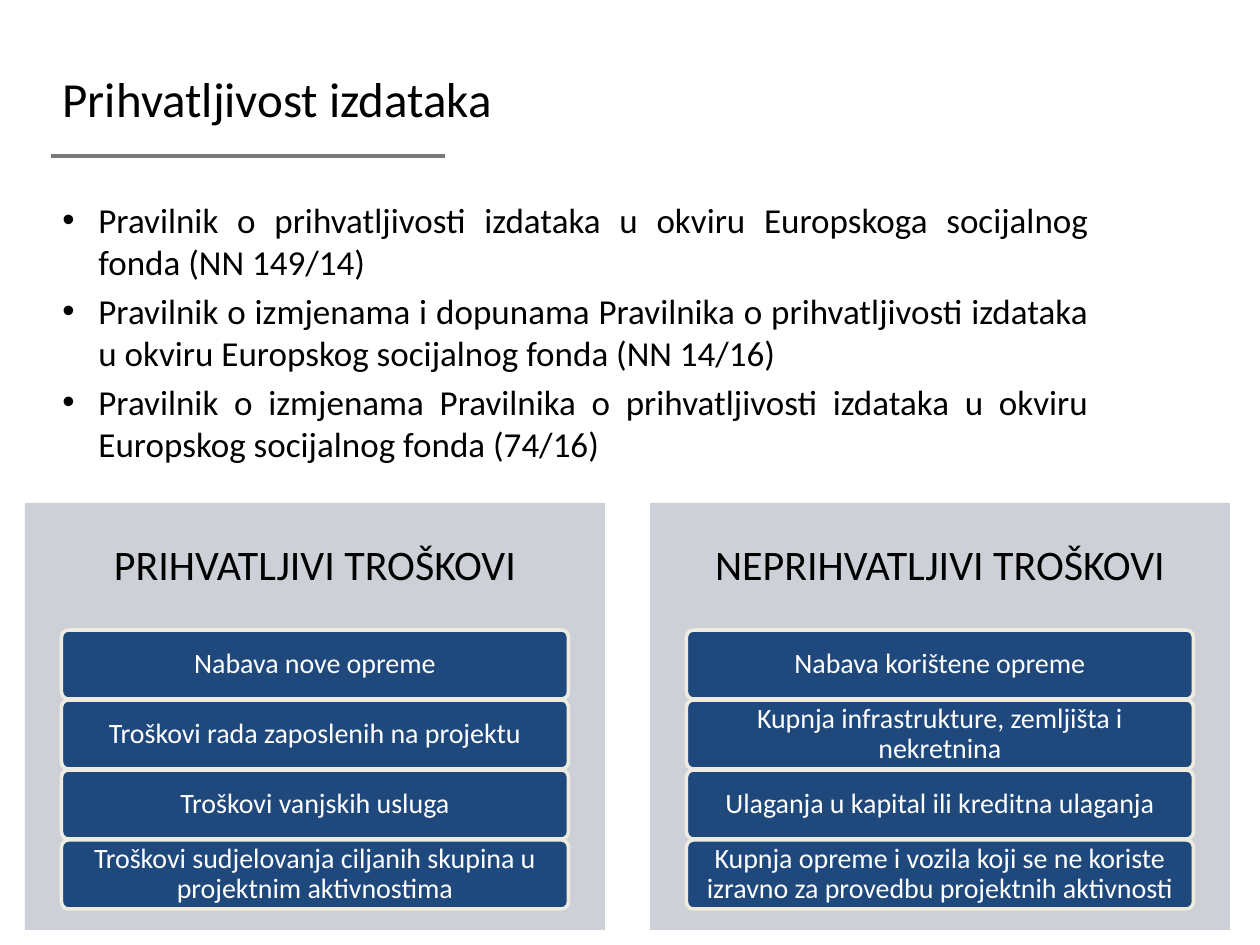
import pptx
import pptx.util
import pptx.oxml
from lxml import etree
from pptx.dml.color import RGBColor
from pptx.enum.shapes import MSO_CONNECTOR, MSO_SHAPE
from pptx.enum.text import MSO_ANCHOR, PP_ALIGN
from pptx.oxml.ns import qn

# Content
TITLE = "Prihvatljivost izdataka"
REGULATIONS = [
    "Pravilnik o prihvatljivosti izdataka u okviru Europskoga socijalnog fonda (NN 149/14)",
    "Pravilnik o izmjenama i dopunama Pravilnika o prihvatljivosti izdataka u okviru Europskog socijalnog fonda (NN 14/16)",
    "Pravilnik o izmjenama Pravilnika o prihvatljivosti izdataka u okviru Europskog socijalnog fonda (74/16)",
]
COST_GROUPS = [
    ("PRIHVATLJIVI TROŠKOVI", [
        "Nabava nove opreme",
        "Troškovi rada zaposlenih na projektu",
        "Troškovi vanjskih usluga",
        "Troškovi sudjelovanja ciljanih skupina u projektnim aktivnostima",
    ]),
    ("NEPRIHVATLJIVI TROŠKOVI", [
        "Nabava korištene opreme",
        "Kupnja infrastrukture, zemljišta i nekretnina",
        "Ulaganja u kapital ili kreditna ulaganja",
        "Kupnja opreme i vozila koji se ne koriste izravno za provedbu projektnih aktivnosti",
    ]),
]
COLORS = {"text": "000000", "rule": "777877", "panel": "CDD0D7",
          "item": "1F497D", "border": "EEECE1", "item_text": "FFFFFF"}
FONT = "Calibri"

# Layout in px
SLIDE_W, SLIDE_H = 1260, 945
PANEL_X, PANEL_Y, PANEL_W, PANEL_H = 25, 503, 580, 427
PANEL_STEP, HEADING_H = 625, 128
ITEM_W, ITEM_H, ITEM_Y, ITEM_STEP = 507, 69, 630, 70


def px(value):
    return pptx.util.Emu(round(value * 914400 / 126))


def color(name):
    return RGBColor.from_string(COLORS[name])


def format_text(para, size, color_name, align):
    para.alignment = align
    for span in para.runs:
        span.font.name = FONT
        span.font.size = pptx.util.Pt(size)
        span.font.color.rgb = color(color_name)


def set_label(box, text, size, color_name, inset_x, inset_y):
    frame = box.text_frame
    frame.word_wrap = True
    frame.vertical_anchor = MSO_ANCHOR.MIDDLE
    frame.margin_left = frame.margin_right = px(inset_x)
    frame.margin_top = frame.margin_bottom = px(inset_y)
    frame.text = text
    frame.paragraphs[0].line_spacing = 0.9
    format_text(frame.paragraphs[0], size, color_name, PP_ALIGN.CENTER)


def add_block(page, kind, left, top, width, height, fill):
    block = page.shapes.add_shape(kind, px(left), px(top), px(width), px(height))
    block.shadow.inherit = False
    block.fill.solid()
    block.fill.fore_color.rgb = color(fill)
    block.line.fill.background()
    return block


def add_title(page):
    title = page.shapes.title
    title.left, title.top, title.width, title.height = px(50), px(39), px(997), px(117)
    title.text_frame.text = TITLE
    title.text_frame.vertical_anchor = MSO_ANCHOR.MIDDLE
    format_text(title.text_frame.paragraphs[0], 28, "text", PP_ALIGN.LEFT)
    rule = page.shapes.add_connector(MSO_CONNECTOR.STRAIGHT, px(51), px(156), px(445), px(156))
    rule.line.color.rgb = color("rule")
    rule.line.width = pptx.util.Pt(2)
    etree.SubElement(rule._element.spPr, qn("a:effectLst"))


def add_regulations(page):
    box = page.shapes.add_textbox(px(50), px(192), px(1051), px(460))
    frame = box.text_frame
    frame.word_wrap = True
    for index, text in enumerate(REGULATIONS):
        para = frame.paragraphs[0] if index == 0 else frame.add_paragraph()
        para.text = text
        properties = para._p.get_or_add_pPr()
        properties.set("marL", str(px(36)))
        properties.set("indent", str(-px(36)))
        etree.SubElement(properties, qn("a:buFont"), typeface="Arial")
        etree.SubElement(properties, qn("a:buChar"), char="•")
        if index:
            para.space_before = pptx.util.Pt(4)
        format_text(para, 20, "text", PP_ALIGN.JUSTIFY)


def add_cost_group(page, left, heading, items):
    add_block(page, MSO_SHAPE.RECTANGLE, left, PANEL_Y, PANEL_W, PANEL_H, "panel")
    box = page.shapes.add_textbox(px(left), px(PANEL_Y), px(PANEL_W), px(HEADING_H))
    set_label(box, heading, 24, "text", 12, 12)
    item_left = left + (PANEL_W - ITEM_W) / 2
    for index, text in enumerate(items):
        item = add_block(page, MSO_SHAPE.ROUNDED_RECTANGLE, item_left,
                         ITEM_Y + index * ITEM_STEP, ITEM_W, ITEM_H, "item")
        item.adjustments[0] = 0.1
        item.line.color.rgb = color("border")
        item.line.width = pptx.util.Pt(2)
        set_label(item, text, 16, "item_text", 5, 4)


def main():
    deck = pptx.Presentation()
    deck.slide_width, deck.slide_height = px(SLIDE_W), px(SLIDE_H)
    page = deck.slides.add_slide(deck.slide_layouts[5])
    add_title(page)
    add_regulations(page)
    for index, (heading, items) in enumerate(COST_GROUPS):
        add_cost_group(page, PANEL_X + index * PANEL_STEP, heading, items)
    deck.save("out.pptx")


if __name__ == "__main__":
    main()
